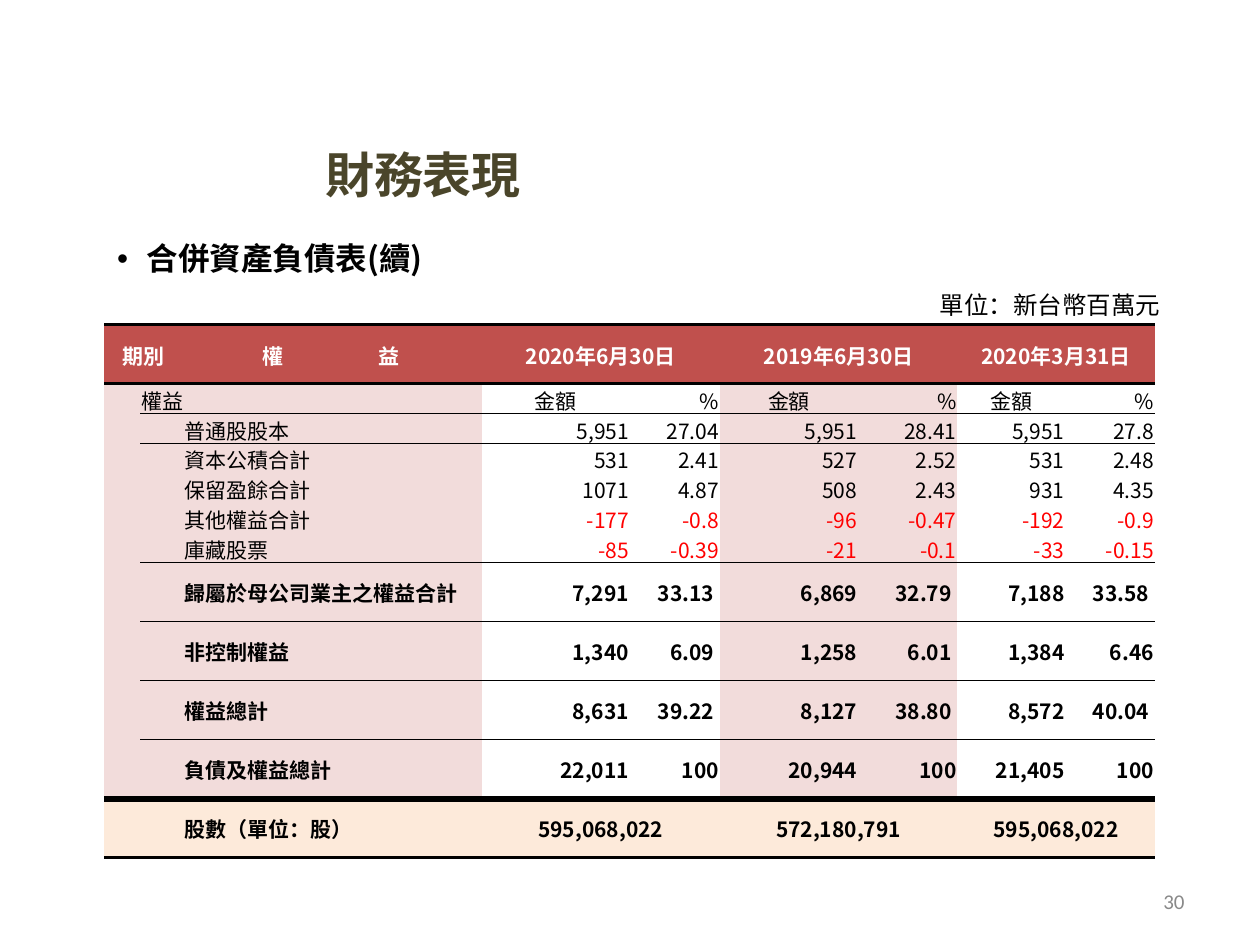
from dataclasses import dataclass

from lxml.etree import SubElement
from pptx import Presentation
from pptx.dml.color import RGBColor
from pptx.enum.text import MSO_ANCHOR, MSO_AUTO_SIZE, PP_ALIGN
from pptx.oxml.ns import qn
from pptx.util import Cm, Pt

CJK = "Noto Sans CJK SC"
COLORS = {
    "header": "C0504D",
    "band": "F2DCDB",
    "plain": "FFFFFF",
    "shares": "FDEADA",
    "text": "000000",
    "white": "FFFFFF",
    "loss": "FF0000",
    "title": "4A452A",
    "number": "898989",
}
COL_WIDTHS = [0.73, 0.87, 6.01, 2.99, 1.81, 2.79, 2, 2.18, 1.8]
BAND_COLS = {0, 1, 2, 5, 6}
TALL, SHORT = 1.19, 0.6


@dataclass
class Row:
    cells: list[str]
    height: float = SHORT
    bold: bool = False
    fill: str = ""
    color: str = "text"
    merges: tuple[int, ...] = ()
    centered: tuple[int, ...] = ()


@dataclass
class Rule:
    width: float
    first_col: int = 0


@dataclass
class Label:
    text: str
    left: float
    top: float
    width: float
    height: float
    size: float
    color: str = "text"
    font: str = CJK
    bold: bool = False
    align: PP_ALIGN = PP_ALIGN.LEFT
    anchor: MSO_ANCHOR = MSO_ANCHOR.TOP
    bullet: bool = False


def item(name: str, *values: str) -> Row:
    return Row(["", "", name, *values])


def total(name: str, *values: str) -> Row:
    return Row(["", "", name, *values], height=TALL, bold=True)


PAIRS = (3, 5, 7)
ROWS = [
    Row(["期別", "", "權\t益", "2020年6月30日", "", "2019年6月30日", "", "2020年3月31日", ""],
        TALL, True, "header", "white", (0, *PAIRS), (0, *PAIRS)),
    Row(["", "權益", "", *["金額", "%"] * 3], merges=(1,), centered=PAIRS),
    item("普通股股本", "5,951", "27.04", "5,951", "28.41", "5,951", "27.8"),
    item("資本公積合計", "531", "2.41", "527", "2.52", "531", "2.48"),
    item("保留盈餘合計", "1071", "4.87", "508", "2.43", "931", "4.35"),
    item("其他權益合計", "-177", "-0.8", "-96", "-0.47", "-192", "-0.9"),
    item("庫藏股票", "-85", "-0.39", "-21", "-0.1", "-33", "-0.15"),
    total("歸屬於母公司業主之權益合計", "7,291", "33.13 ", "6,869", "32.79 ", "7,188", "33.58 "),
    total("非控制權益", "1,340", "6.09 ", "1,258", "6.01 ", "1,384", "6.46"),
    total("權益總計", "8,631", "39.22 ", "8,127", "38.80 ", "8,572", "40.04 "),
    total("負債及權益總計", "22,011", "100", "20,944", "100", "21,405", "100"),
    Row(["", "", "股數（單位：股）", "595,068,022", "", "572,180,791", "", "595,068,022", ""],
        TALL, True, "shares", merges=PAIRS, centered=PAIRS),
]
RULES = {0: Rule(2), 1: Rule(2), 11: Rule(4), 12: Rule(2)}
RULES |= {i: Rule(1, 1) for i in (2, 3, 7, 8, 9, 10)}

LABELS = [
    Label("單位：新台幣百萬元", 18.69, 5.72, 5, 0.99, 14),
    Label("合併資產負債表(續)", 2.11, 4.7, 14.2, 1.02, 18, bold=True, bullet=True),
    Label("30", 18.21, 17.65, 5.92, 1.02, 12, "number", "Calibri",
          align=PP_ALIGN.RIGHT, anchor=MSO_ANCHOR.MIDDLE),
]


def style_run(r, size: float, color: str, bold: bool, font: str = CJK) -> None:
    r.font.size = Pt(size)
    r.font.bold = bold
    r.font.color.rgb = RGBColor.from_string(COLORS[color])
    r.font.name = font
    SubElement(r.font._element, qn("a:ea"), typeface=font)


def add_title(slide) -> None:
    sp = slide.shapes.title
    sp.left, sp.top, sp.width, sp.height = Cm(6.3), Cm(2.92), Cm(4.5), Cm(1.35)
    tf = sp.text_frame
    tf.text = "財務表現"
    tf.word_wrap = False
    tf.auto_size = MSO_AUTO_SIZE.NONE
    tf.vertical_anchor = MSO_ANCHOR.TOP
    p = tf.paragraphs[0]
    p.alignment = PP_ALIGN.LEFT
    p.line_spacing = 0.9
    style_run(p.runs[0], 28, "title", True)


def add_label(slide, label: Label) -> None:
    sp = slide.shapes.add_textbox(Cm(label.left), Cm(label.top), Cm(label.width), Cm(label.height))
    tf = sp.text_frame
    tf.word_wrap = True
    tf.vertical_anchor = label.anchor
    tf.text = label.text
    p = tf.paragraphs[0]
    p.alignment = label.align
    if label.bullet:
        pPr = p._p.get_or_add_pPr()
        pPr.set("marL", str(Cm(0.6)))
        pPr.set("indent", str(-Cm(0.6)))
        SubElement(pPr, qn("a:buFont"), typeface="Arial")
        SubElement(pPr, qn("a:buChar"), char="•")
    style_run(p.runs[0], label.size, label.color, label.bold, label.font)


def set_borders(cell, row: int, col: int) -> None:
    tcPr = cell._tc.get_or_add_tcPr()
    sides = {"lnL": None, "lnR": None, "lnT": RULES.get(row), "lnB": RULES.get(row + 1)}
    for tag, rule in sides.items():
        ln = SubElement(tcPr, qn(f"a:{tag}"))
        if rule and col >= rule.first_col:
            ln.set("w", str(Pt(rule.width)))
            fill = SubElement(ln, qn("a:solidFill"))
            SubElement(fill, qn("a:srgbClr"), val=COLORS["text"])
        else:
            ln.set("w", "0")
            SubElement(ln, qn("a:noFill"))


def fill_cell(cell, row: Row, row_index: int, col: int) -> None:
    text = row.cells[col]
    set_borders(cell, row_index, col)
    cell.fill.solid()
    fill = row.fill or ("band" if col in BAND_COLS else "plain")
    cell.fill.fore_color.rgb = RGBColor.from_string(COLORS[fill])
    cell.vertical_anchor = MSO_ANCHOR.MIDDLE
    cell.margin_left = cell.margin_right = cell.margin_top = Cm(0.02)
    cell.margin_bottom = 0
    p = cell.text_frame.paragraphs[0]
    if not text:
        SubElement(p._p, qn("a:endParaRPr"), sz="1200")
        return
    p.text = text
    if col in row.centered:
        p.alignment = PP_ALIGN.CENTER
    else:
        p.alignment = PP_ALIGN.RIGHT if col > 2 else PP_ALIGN.LEFT
    if "\t" in text:
        cell.margin_left = Cm(1.6)
        tabs = SubElement(p._p.get_or_add_pPr(), qn("a:tabLst"))
        SubElement(tabs, qn("a:tab"), pos=str(Cm(2.34)), algn="l")
    color = "loss" if text.startswith("-") else row.color
    for r in p.runs:
        style_run(r, 12, color, row.bold)


def add_balance_sheet(slide) -> None:
    frame = slide.shapes.add_table(
        len(ROWS), len(COL_WIDTHS), Cm(2.1), Cm(6.55),
        Cm(sum(COL_WIDTHS)), Cm(sum(row.height for row in ROWS)))
    table = frame.table
    table.first_row = table.horz_banding = False
    for column, width in zip(table.columns, COL_WIDTHS):
        column.width = Cm(width)
    for i, row in enumerate(ROWS):
        table.rows[i].height = Cm(row.height)
        for col in range(len(COL_WIDTHS)):
            fill_cell(table.cell(i, col), row, i, col)
        for col in row.merges:
            table.cell(i, col).merge(table.cell(i, col + 1))


def main() -> None:
    prs = Presentation()
    prs.slide_width, prs.slide_height = Cm(25.4), Cm(19.05)
    slide = prs.slides.add_slide(prs.slide_layouts[5])
    add_title(slide)
    for label in LABELS:
        add_label(slide, label)
    add_balance_sheet(slide)
    prs.save("out.pptx")


if __name__ == "__main__":
    main()
